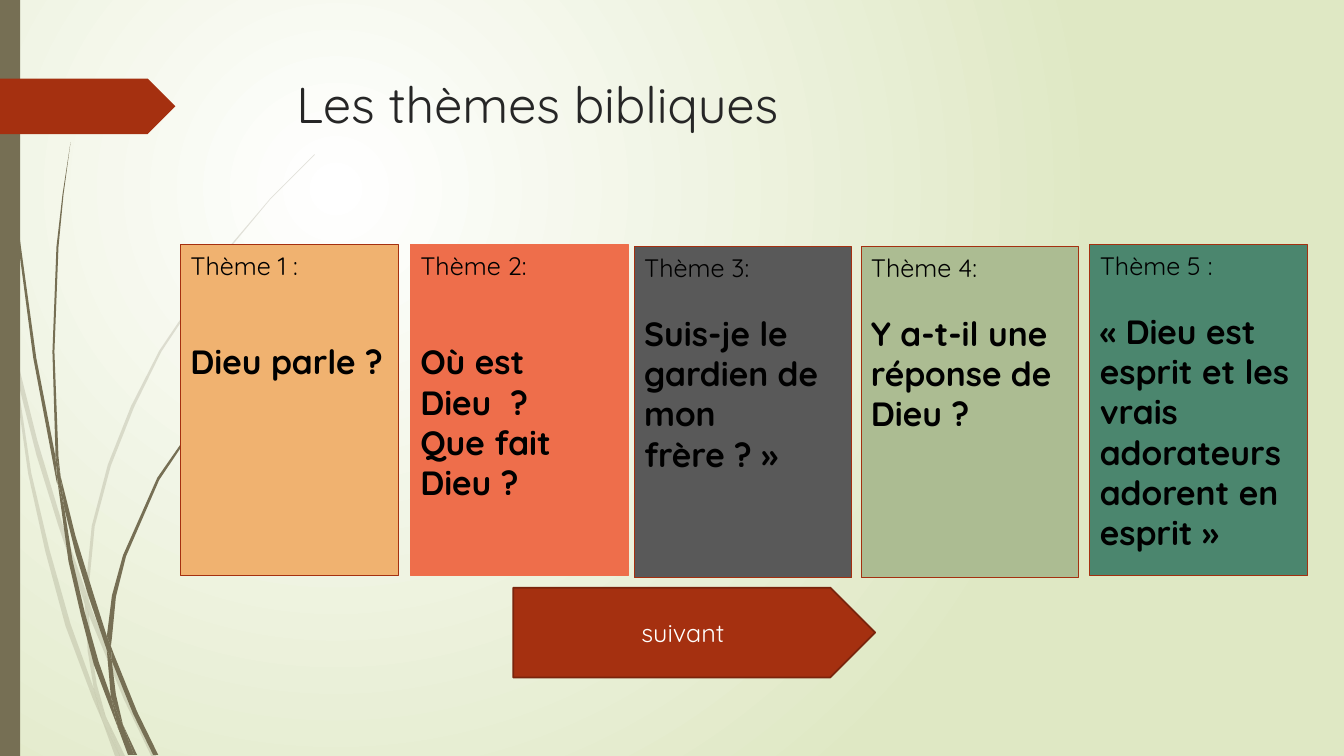
from lxml import etree
from pptx import Presentation
from pptx.dml.color import RGBColor
from pptx.enum.shapes import MSO_SHAPE as Shape
from pptx.enum.text import MSO_ANCHOR as Anchor, MSO_AUTO_SIZE as AutoSize, PP_ALIGN as Align
from pptx.oxml import parse_xml
from pptx.oxml.ns import qn
from pptx.util import Inches, Pt

WIDTH, HEIGHT = 13.33, 7.5
FONT = "Quicksand"
TITLE = "Les thèmes bibliques"
NEXT = "suivant"
RED, DARK_RED, OLIVE = "A53010", "7A240C", "766F54"
BLANK_LINE = 21.8  # points
HARD_SPACE = chr(160)

CARD_SIZE = (2.16, 3.28)
# left, top, fill, line, heading, blank lines below the heading, body paragraphs
CARDS = [
    (1.79, 2.43, "F0B270", RED, "Thème 1 :", 2, ["Dieu parle ?"]),
    (4.07, 2.43, "EE6E4B", "EE6E4B", "Thème 2:", 2,
     ["Où est", "Dieu  ?", "Que fait Dieu ?"]),
    (6.29, 2.45, "595959", RED, "Thème 3:", 1,
     ["Suis-je le gardien de mon frère ? »"]),
    (8.54, 2.45, "ACBC92", RED, "Thème 4:", 1, ["Y a-t-il une réponse de Dieu ?"]),
    (10.81, 2.43, "4B866E", RED, "Thème 5 :", 1,
     ["« Dieu est esprit et les vrais adorateurs adorent en esprit »"]),
]

# Outlines of the pieces that make up the blades of grass
PALE_GRASS = [
    [(.11, 3.5), (.09, 3.22), (0, 2.82), (0, 2.99), (.1, 3.44)],
    [(.58, 5.22), (.84, 5.99), (.85, 5.86), (.62, 5.2), (.37, 4.37), (.14, 3.45),
     (.17, 3.76), (.36, 4.51)],
    [(.92, 6.07), (.88, 5.96), (.88, 6.1), (1.23, 6.94), (1.5, 7.5), (1.55, 7.5),
     (1.27, 6.92)],
    [(1.19, 7.5), (1.24, 7.5), (1.05, 7.11)],
    [(.93, 6.83), (.7, 6.19), (.49, 5.45), (.31, 4.69), (.17, 3.76), (.11, 3.5),
     (.28, 4.7), (.45, 5.47), (.65, 6.21), (.92, 6.93), (1.01, 7.14)],
    [(.84, 5.99), (.87, 6.46), (.93, 6.83), (.96, 6.92), (1.05, 7.11), (.96, 6.79),
     (.91, 6.46), (.88, 6.08)],
    [(.88, 5.84), (.94, 5.22), (1.1, 4.62), (1.33, 4.04), (1.6, 3.49), (2.29, 2.45),
     (2.68, 1.98), (3.12, 1.54), (3.12, 1.53), (2.68, 1.97), (2.28, 2.44),
     (1.58, 3.48), (1.3, 4.03), (1.07, 4.61), (.91, 5.22), (.85, 5.84), (.88, 5.96)],
    [(1.01, 7.14), (1.14, 7.5), (1.19, 7.5)],
    [(.88, 6.08), (.88, 5.96), (.85, 5.86), (.84, 5.99)],
    [(.96, 6.92), (.93, 6.83), (.99, 7.07), (1.01, 7.14), (1.19, 7.5), (1.05, 7.11)],
]
DARK_GRASS = [
    [(.07, 1.1), (.17, 2.33), (.33, 3.55), (.56, 4.77), (.57, 4.81), (.55, 4.53),
     (.36, 3.55), (.19, 2.32), (.08, 1.09), (.04, 0), (.03, 0)],
    [(.88, 5.92), (1.06, 6.45), (1.06, 6.31), (.93, 5.9), (.75, 5.32), (.6, 4.72),
     (.64, 5.05), (.75, 5.49)],
    [(1.13, 6.49), (1.1, 6.41), (1.11, 6.56), (1.32, 7.08), (1.52, 7.49),
     (1.57, 7.49), (1.36, 7.06)],
    [(1.1, 6.91), (.98, 6.57), (.84, 6.07), (.72, 5.56), (.64, 5.05), (.57, 4.77),
     (.68, 5.57), (.8, 6.09), (.93, 6.59), (1.17, 7.22)],
    [(.6, 4.72), (.58, 4.53), (.54, 3.49), (.58, 2.45), (.63, 1.93), (.7, 1.41),
     (.62, 1.93), (.56, 2.45), (.52, 3.49), (.55, 4.49)],
    [(1.33, 7.49), (1.36, 7.49), (1.22, 7.19)],
    [(.57, 4.77), (.64, 5.05), (.6, 4.72), (.55, 4.49), (.55, 4.53)],
    [(1.11, 6.33), (1.15, 5.92), (1.25, 5.52), (1.58, 4.76), (2.05, 4.06),
     (2.31, 3.74), (2.61, 3.44), (2.6, 3.44), (2.31, 3.73), (2.04, 4.05),
     (1.56, 4.74), (1.22, 5.51), (1.11, 5.91), (1.06, 6.31), (1.1, 6.41)],
    [(1.17, 7.22), (1.27, 7.49), (1.31, 7.49)],
    [(1.06, 6.45), (1.1, 6.91), (1.16, 7.06), (1.22, 7.19), (1.15, 6.89), (1.11, 6.56)],
    [(1.06, 6.45), (1.11, 6.56), (1.1, 6.41), (1.06, 6.31)],
    [(1.16, 7.06), (1.1, 6.91), (1.17, 7.22), (1.3, 7.49), (1.33, 7.49), (1.22, 7.19)],
]

BACKGROUND = """
<a:gradFill xmlns:a="http://schemas.openxmlformats.org/drawingml/2006/main">
  <a:gsLst>
    <a:gs pos="0"><a:srgbClr val="FFFFFF"/></a:gs>
    <a:gs pos="100000"><a:srgbClr val="DFE8C4"/></a:gs>
  </a:gsLst>
  <a:path path="circle"><a:fillToRect l="50000" t="50000" r="100000" b="100000"/></a:path>
</a:gradFill>"""


def color(value):
    return RGBColor.from_string(value)


def paint(shape, fill, line=None, weight=0.75):
    shape.shadow.inherit = False
    shape.fill.solid()
    shape.fill.fore_color.rgb = color(fill)
    if line:
        shape.line.color.rgb = color(line)
        shape.line.width = Pt(weight)
    else:
        shape.line.fill.background()


def add_block(page, kind, left, top, width, height, *colors):
    shape = page.shapes.add_shape(kind, *map(Inches, (left, top, width, height)))
    paint(shape, *colors)
    return shape


def write(para, text, size, ink, bold=False, align=Align.LEFT):
    para.text = text
    para.alignment = align
    for span in para.runs:
        span.font.name, span.font.size, span.font.bold = FONT, Pt(size), bold
        span.font.color.rgb = color(ink)


def bind_quotes(text):
    """Keep closing and opening marks of a quotation on the line of their word."""
    if "»" in text:
        for pair in (" ?", " »", "« "):
            text = text.replace(pair, pair.replace(" ", HARD_SPACE))
    return text


def add_grass(page, outline, opacity=None):
    first, *rest = [(Inches(x), Inches(y)) for x, y in outline]
    builder = page.shapes.build_freeform(*first)
    builder.add_line_segments(rest, close=True)
    grass = builder.convert_to_shape()
    paint(grass, OLIVE)
    if opacity:
        tint = grass._element.spPr.find(qn("a:solidFill"))[0]
        etree.SubElement(tint, qn("a:alpha")).set("val", str(opacity * 1000))


def add_card(page, left, top, fill, line, heading, blanks, body):
    card = add_block(page, Shape.RECTANGLE, left, top, *CARD_SIZE, fill, line)
    frame = card.text_frame
    frame.word_wrap = True
    frame.vertical_anchor = Anchor.TOP
    write(frame.paragraphs[0], heading, 18, "000000")
    for i, text in enumerate(body):
        para = frame.add_paragraph()
        write(para, bind_quotes(text), 24, "000000", bold=True)
        para.space_before = Pt(0 if i else blanks * BLANK_LINE)


def main():
    deck = Presentation()
    deck.slide_width, deck.slide_height = Inches(WIDTH), Inches(HEIGHT)
    page = deck.slides.add_slide(deck.slide_layouts[5])

    page.background.fill.gradient()
    gradient = page._element.cSld.find(".//" + qn("a:gradFill"))
    gradient.getparent().replace(gradient, parse_xml(BACKGROUND))

    for outline in PALE_GRASS:
        add_grass(page, outline, opacity=20)
    for outline in DARK_GRASS:
        add_grass(page, outline)
    add_block(page, Shape.RECTANGLE, 0, 0, 0.2, HEIGHT, OLIVE)
    add_block(page, Shape.PENTAGON, 0, 0.78, 1.74, 0.55, RED)

    title = page.shapes.title
    title.left, title.top, title.width, title.height = map(Inches, (2.84, 0.68, 9.75, 1.4))
    title.text_frame.auto_size = AutoSize.NONE
    title.text_frame.vertical_anchor = Anchor.TOP
    write(title.text_frame.paragraphs[0], TITLE, 36, "262626")

    for card in CARDS:
        add_card(page, *card)

    button = add_block(page, Shape.PENTAGON, 5.09, 5.83, 3.59, 0.89, RED, DARK_RED, 1.25)
    button.text_frame.vertical_anchor = Anchor.MIDDLE
    write(button.text_frame.paragraphs[0], NEXT, 18, "FFFFFF", align=Align.CENTER)

    deck.save("out.pptx")


if __name__ == "__main__":
    main()
